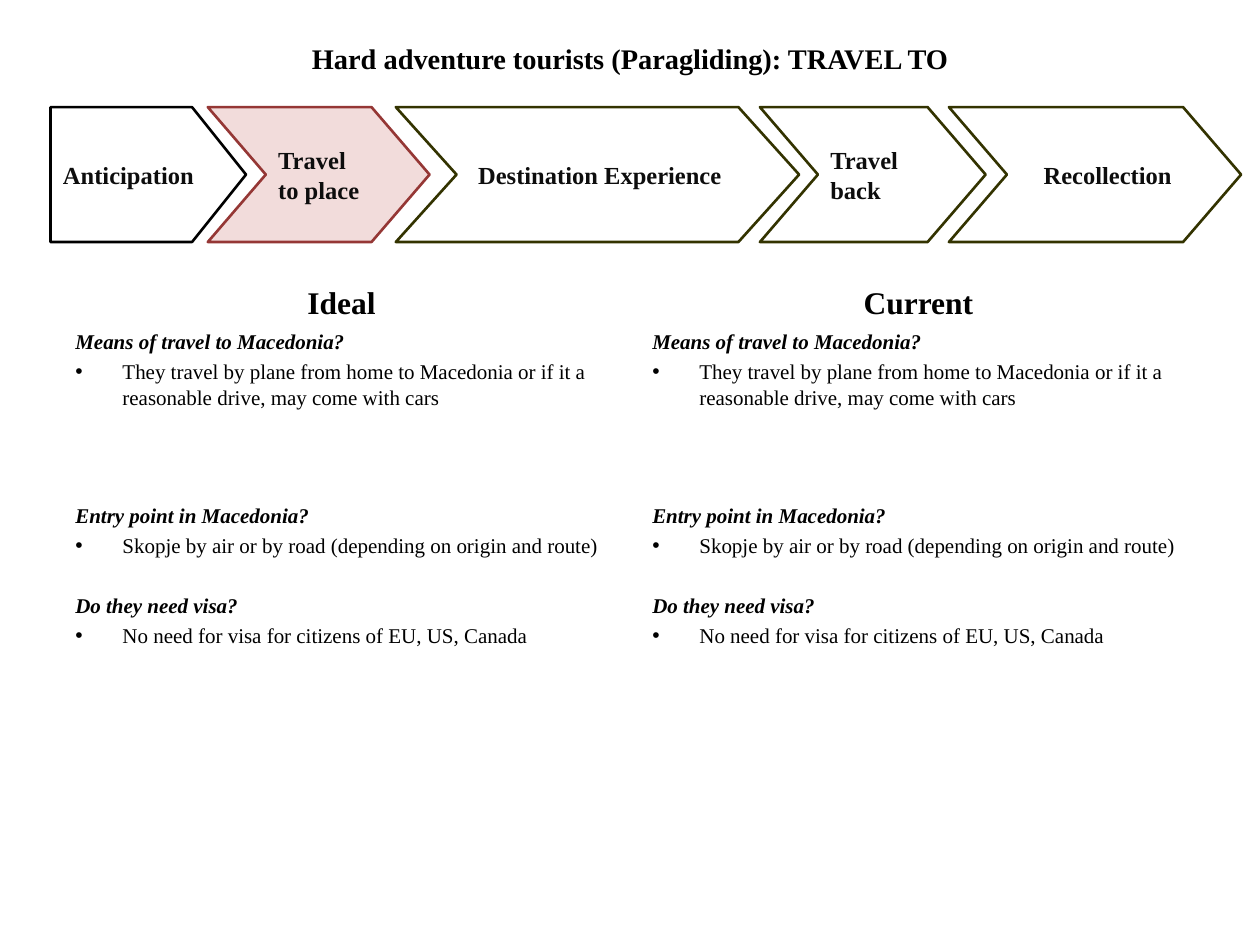
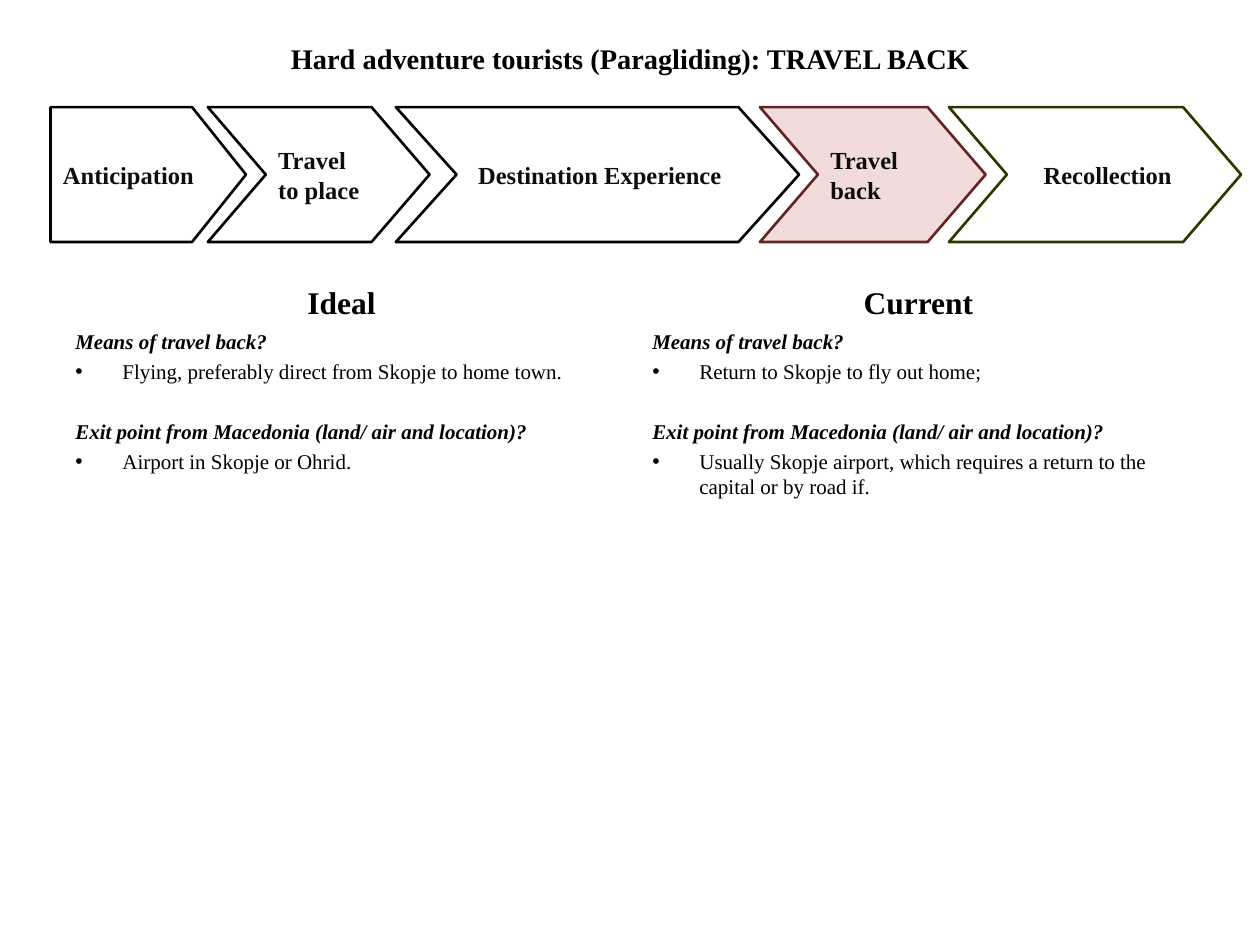
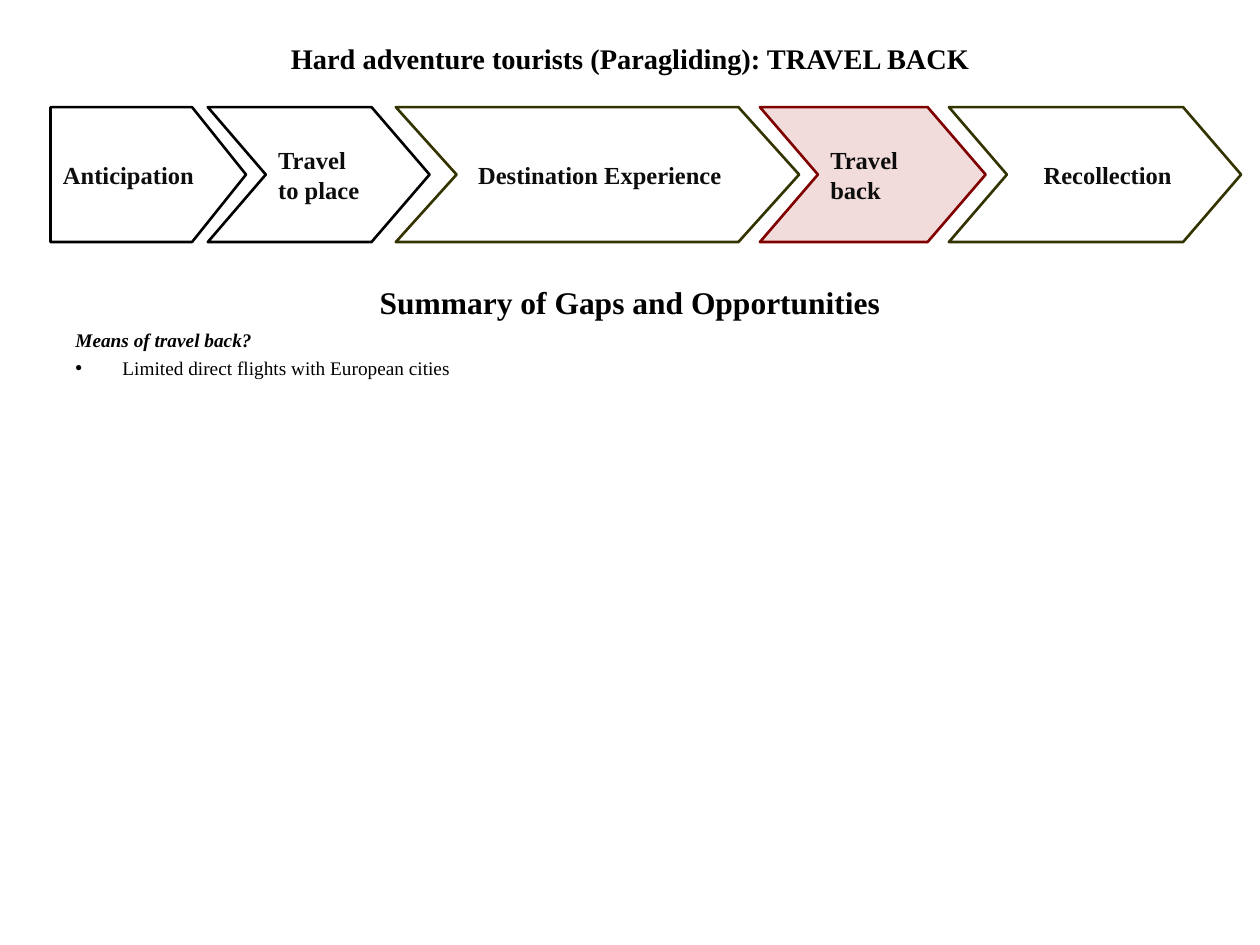
"""Build three slides on the journey of hard adventure tourists."""
from collections import namedtuple

from lxml.etree import SubElement
from pptx import Presentation
from pptx.dml.color import RGBColor
from pptx.enum.shapes import MSO_SHAPE
from pptx.enum.text import MSO_ANCHOR, MSO_AUTO_SIZE, PP_ALIGN
from pptx.oxml.ns import qn
from pptx.util import Cm, Pt

FONT = "Times New Roman"
COLOURS = {
    "text": "000000",
    "stage_text": "0D0D0D",
    "white": "FFFFFF",
    "rose": "F2DCDB",
    "black": "000000",
    "olive": "333300",
    "red": "953735",
    "wine": "632523",
    "maroon": "800000",
}
OPEN = (None, "black")
AHEAD = ("white", "olive")

Stage = namedtuple("Stage", "label left width form point align inset_left")
STAGES = [
    Stage("Anticipation", 1.02, 3.94, MSO_SHAPE.PENTAGON, 0.4, PP_ALIGN.LEFT, 0.25),
    Stage("Travel to place", 4.19, 4.47, MSO_SHAPE.CHEVRON, 0.43, PP_ALIGN.LEFT, 0.25),
    Stage("Destination Experience", 7.98, 8.13, MSO_SHAPE.CHEVRON, 0.45, PP_ALIGN.CENTER, 0.25),
    Stage("Travel back", 15.32, 4.55, MSO_SHAPE.CHEVRON, 0.43, PP_ALIGN.LEFT, 0.25),
    Stage("Recollection", 19.13, 5.89, MSO_SHAPE.CHEVRON, 0.43, PP_ALIGN.LEFT, 0.74),
]

MARGIN = 1.27
FULL_WIDTH = 22.86
COLUMN_WIDTH = 11.23
CURRENT_LEFT = MARGIN + FULL_WIDTH - COLUMN_WIDTH

TRAVEL_TO = [
    ("Means of travel to Macedonia?",
     "They travel by plane from home to Macedonia or if it a reasonable drive, may come with cars", 0),
    ("Entry point in Macedonia?",
     "Skopje by air or by road (depending on origin and route)", 3),
    ("Do they need visa?", "No need for visa for citizens of EU, US, Canada", 1),
]
MEANS_BACK = "Means of travel back?"
EXIT_POINT = "Exit point from Macedonia (land/ air and location)?"
BACK_IDEAL = [
    (MEANS_BACK, "Flying, preferably direct from Skopje to home town.", 0),
    (EXIT_POINT, "Airport in Skopje or Ohrid.", 1),
]
BACK_CURRENT = [
    (MEANS_BACK, "Return to Skopje to fly out home;", 0),
    (EXIT_POINT, "Usually Skopje airport, which requires a return to the capital or by road if.", 1),
]
BACK_GAPS = [(MEANS_BACK, "Limited direct flights with European cities", 0)]


def rgb(name):
    """Return the named colour."""
    return RGBColor.from_string(COLOURS[name])


def add_run(paragraph, text, size, bold=True, italic=False, colour="text"):
    """Add one formatted run to a paragraph."""
    run = paragraph.add_run()
    run.text = text
    run.font.name = FONT
    run.font.size = Pt(size)
    run.font.bold = bold
    run.font.italic = italic
    run.font.color.rgb = rgb(colour)


def add_bullet(paragraph):
    """Give a paragraph a bullet with a hanging indent."""
    properties = paragraph._p.get_or_add_pPr()
    properties.set("marL", str(Cm(0.95)))
    properties.set("indent", str(-Cm(0.95)))
    SubElement(properties, qn("a:buFont")).set("typeface", "Arial")
    SubElement(properties, qn("a:buChar")).set("char", "•")


def set_title(slide, text):
    """Place and fill the slide title."""
    title = slide.shapes.title
    title.left, title.top = Cm(MARGIN), Cm(0.76)
    title.width, title.height = Cm(FULL_WIDTH), Cm(0.84)
    frame = title.text_frame
    frame.auto_size = MSO_AUTO_SIZE.NONE
    frame.vertical_anchor = MSO_ANCHOR.MIDDLE
    paragraph = frame.paragraphs[0]
    paragraph.alignment = PP_ALIGN.CENTER
    add_run(paragraph, text, 16.2)


def add_stage(slide, stage, fill, line):
    """Draw one stage of the journey."""
    arrow = slide.shapes.add_shape(
        stage.form, Cm(stage.left), Cm(2.16), Cm(stage.width), Cm(2.72))
    arrow.adjustments[0] = stage.point
    arrow.shadow.inherit = False
    if fill:
        arrow.fill.solid()
        arrow.fill.fore_color.rgb = rgb(fill)
    else:
        arrow.fill.background()
    arrow.line.color.rgb = rgb(line)
    arrow.line.width = Pt(1.5)
    frame = arrow.text_frame
    frame.word_wrap = True
    frame.vertical_anchor = MSO_ANCHOR.MIDDLE
    frame.margin_left = Cm(stage.inset_left)
    frame.margin_right = Cm(0.15)
    paragraph = frame.paragraphs[0]
    paragraph.alignment = stage.align
    add_run(paragraph, stage.label, 14, colour="stage_text")


def add_journey(slide, looks):
    """Draw the row of stages, each with its fill and line."""
    for stage, (fill, line) in zip(STAGES, looks):
        add_stage(slide, stage, fill, line)


def add_text_frame(slide, left, top, width, height):
    """Add a wrapping text box and return its frame."""
    frame = slide.shapes.add_textbox(Cm(left), Cm(top), Cm(width), Cm(height)).text_frame
    frame.word_wrap = True
    return frame


def add_column(slide, heading, answers, left, width, size=12):
    """Add a heading with questions and bulleted answers below it."""
    heading_frame = add_text_frame(slide, left, 5.33, width, 1.27)
    heading_frame.vertical_anchor = MSO_ANCHOR.BOTTOM
    heading_line = heading_frame.paragraphs[0]
    heading_line.alignment = PP_ALIGN.CENTER
    add_run(heading_line, heading, 18)

    frame = add_text_frame(slide, left, 6.5, width, 12.09)
    for index, (question, answer, gap_lines) in enumerate(answers):
        asked = frame.add_paragraph() if index else frame.paragraphs[0]
        asked.space_before = Pt(size * (0.24 + 1.4 * gap_lines))
        add_run(asked, question, size, italic=True)
        replied = frame.add_paragraph()
        replied.space_before = Pt(size * 0.24)
        add_bullet(replied)
        add_run(replied, answer, size, bold=False)


def add_journey_slide(deck, title, looks):
    """Add a slide with its title and journey row."""
    slide = deck.slides.add_slide(deck.slide_layouts[5])
    set_title(slide, title)
    add_journey(slide, looks)
    return slide


def add_comparison(slide, ideal, current):
    """Add the ideal and current columns side by side."""
    add_column(slide, "Ideal", ideal, MARGIN, COLUMN_WIDTH)
    add_column(slide, "Current", current, CURRENT_LEFT, COLUMN_WIDTH)


def main():
    """Build and save the deck."""
    deck = Presentation()
    deck.slide_width, deck.slide_height = Cm(25.4), Cm(19.05)
    subject = "Hard adventure tourists (Paragliding): "

    travel_to = add_journey_slide(
        deck, subject + "TRAVEL TO", [OPEN, ("rose", "red"), AHEAD, AHEAD, AHEAD])
    add_comparison(travel_to, TRAVEL_TO, TRAVEL_TO)

    travel_back = add_journey_slide(
        deck, subject + "TRAVEL BACK", [OPEN, OPEN, OPEN, ("rose", "wine"), AHEAD])
    add_comparison(travel_back, BACK_IDEAL, BACK_CURRENT)

    summary = add_journey_slide(
        deck, subject + "TRAVEL BACK", [OPEN, OPEN, AHEAD, ("rose", "maroon"), AHEAD])
    add_column(summary, "Summary of Gaps and Opportunities", BACK_GAPS,
               MARGIN, FULL_WIDTH, size=11)

    deck.save("out.pptx")


if __name__ == "__main__":
    main()
